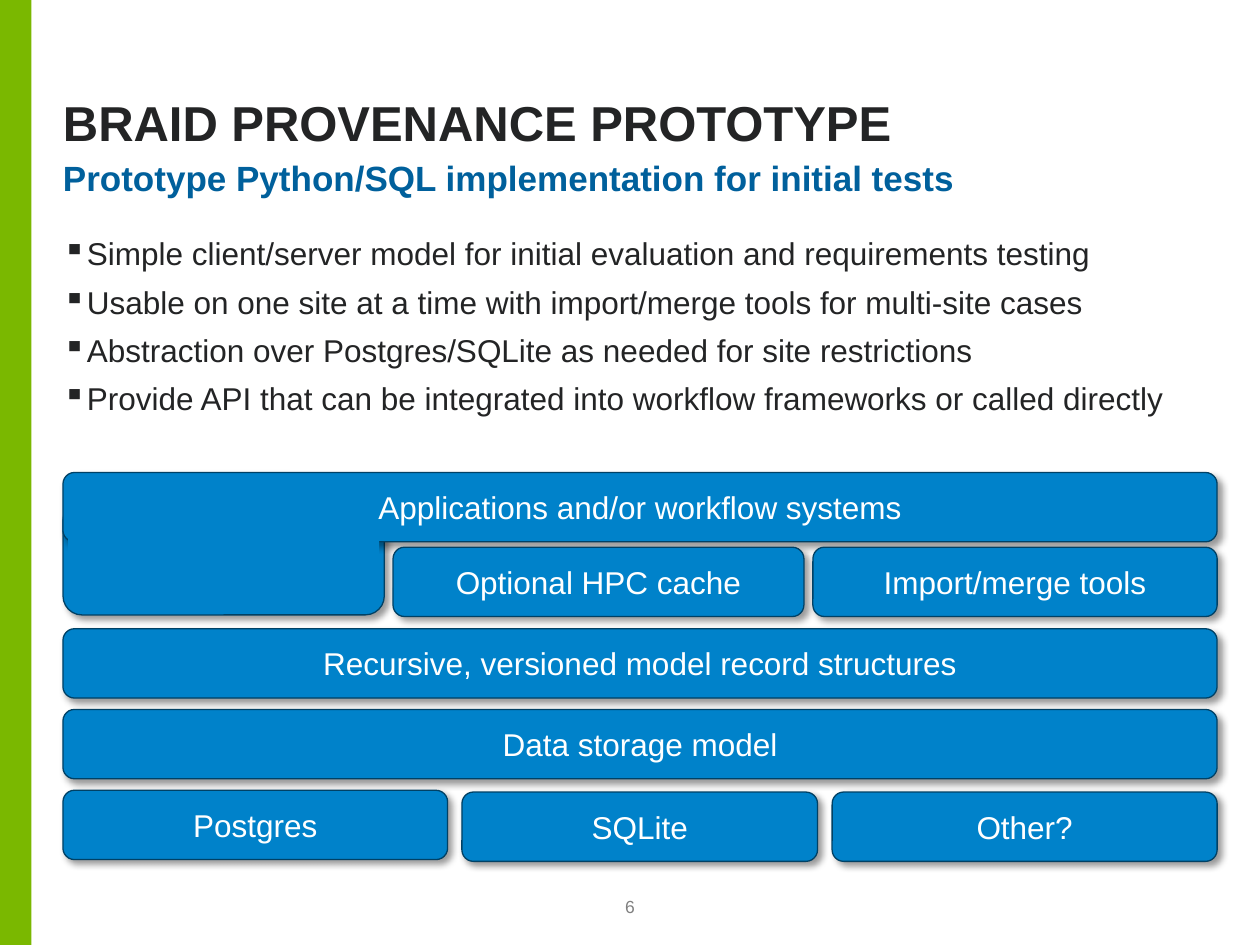
from lxml import etree
from pptx import Presentation
from pptx.dml.color import RGBColor
from pptx.enum import shapes, text
from pptx.oxml import ns
from pptx.util import Pt

GREEN = RGBColor(0x7A, 0xB8, 0x00)
BLUE = RGBColor(0x00, 0x82, 0xCA)
OUTLINE = RGBColor(0x00, 0x41, 0x65)
SUBTITLE_BLUE = RGBColor(0x00, 0x60, 0x9C)
DARK = RGBColor(0x23, 0x24, 0x25)
GRAY = RGBColor(0x80, 0x80, 0x80)
WHITE = RGBColor(0xFF, 0xFF, 0xFF)

LEFT, WIDTH = 36, 659.5
BAR_HEIGHT = 39.6
SHADOW = (
    f'<a:effectLst {ns.nsdecls("a")}>'
    '<a:outerShdw blurRad="50800" dist="38100" dir="2700000" algn="tl" rotWithShape="0">'
    '<a:srgbClr val="000000"><a:alpha val="40000"/></a:srgbClr>'
    '</a:outerShdw></a:effectLst>'
)


def write(shape, lines, size=18, color=DARK, bold=False, align=text.PP_ALIGN.LEFT,
          anchor=text.MSO_ANCHOR.TOP, insets=None, line_spacing=None,
          space_before=0, bullet=None):
    """Fill a shape with one paragraph per line; insets run left, top, right, bottom."""
    frame = shape.text_frame
    frame.word_wrap = True
    frame.vertical_anchor = anchor
    if insets:
        (frame.margin_left, frame.margin_top,
         frame.margin_right, frame.margin_bottom) = map(Pt, insets)
    for index, line in enumerate(lines):
        paragraph = frame.add_paragraph() if index else frame.paragraphs[0]
        if bullet:
            properties = paragraph._p.get_or_add_pPr()
            properties.set("marL", str(Pt(13.7)))
            properties.set("indent", str(-Pt(13.7)))
            etree.SubElement(properties, ns.qn("a:buChar"), char=bullet)
        paragraph.alignment = align
        if line_spacing:
            paragraph.line_spacing = line_spacing
        if index:
            paragraph.space_before = Pt(space_before)
        run = paragraph.add_run()
        run.text = line
        run.font.name = "Arial"
        run.font.size = Pt(size)
        run.font.bold = bold
        run.font.color.rgb = color


def add_block(kind, left, top, width, height, fill=BLUE, raised=False):
    """Add a filled shape; a raised one has an outline and a drop shadow."""
    shape = slide.shapes.add_shape(kind, Pt(left), Pt(top), Pt(width), Pt(height))
    shape.fill.solid()
    shape.fill.fore_color.rgb = fill
    if raised:
        shape.line.color.rgb = OUTLINE
        shape.line.width = Pt(0.75)
        shape._element.spPr.append(etree.fromstring(SHADOW))
    else:
        shape.line.fill.background()
        shape.shadow.inherit = False
    return shape


presentation = Presentation()
presentation.slide_width, presentation.slide_height = Pt(720), Pt(540)
slide = presentation.slides.add_slide(presentation.slide_layouts[6])
RECTANGLE = shapes.MSO_SHAPE.RECTANGLE
ROUNDED = shapes.MSO_SHAPE.ROUNDED_RECTANGLE

add_block(RECTANGLE, 0, 0, 18, 540, fill=GREEN)

title = slide.shapes.add_textbox(Pt(LEFT), Pt(21.6), Pt(WIDTH), Pt(65.5))
write(title, ["BRAID PROVENANCE PROTOTYPE"], size=28, bold=True,
      anchor=text.MSO_ANCHOR.BOTTOM, insets=(0, 0, 0, 0), line_spacing=0.95)

subtitle = slide.shapes.add_textbox(Pt(LEFT), Pt(92.2), Pt(WIDTH), Pt(39.6))
write(subtitle, ["Prototype Python/SQL implementation for initial tests"], size=20,
      color=SUBTITLE_BLUE, bold=True, insets=(0, 0, 0, 0), line_spacing=0.9)

body = slide.shapes.add_textbox(Pt(LEFT), Pt(134), Pt(WIDTH), Pt(129.6))
write(body, [
    "Simple client/server model for initial evaluation and requirements testing",
    "Usable on one site at a time with import/merge tools for multi-site cases",
    "Abstraction over Postgres/SQLite as needed for site restrictions",
    "Provide API that can be integrated into workflow frameworks or called directly",
], insets=(0, 0, 0, 3.6), space_before=6, bullet="▪")

page_number = slide.shapes.add_textbox(Pt(342), Pt(509.8), Pt(36), Pt(14.4))
write(page_number, ["6"], size=10, color=GRAY, align=text.PP_ALIGN.CENTER,
      anchor=text.MSO_ANCHOR.BOTTOM, insets=(0, 3.6, 0, 0))

# The applications layer reaches down on the left: a leg behind, a patch over the seam
add_block(ROUNDED, LEFT, 286.6, 183.6, 64.8, raised=True)

layers = [
    ("Applications and/or workflow systems", LEFT, 270, WIDTH),
    ("Recursive, versioned model record structures", LEFT, 359.3, WIDTH),
    ("Data storage model", LEFT, 405.4, WIDTH),
    ("Optional HPC cache", 224.6, 312.7, 234.8),
    ("Import/merge tools", 464.5, 312.7, 231),
    ("Postgres", LEFT, 451.6, 219.8),
    ("SQLite", 264, 452.6, 203.2),
    ("Other?", 475.5, 452.6, 220),
]
for label, left, top, width in layers:
    layer = add_block(ROUNDED, left, top, width, BAR_HEIGHT, raised=True)
    write(layer, [label], color=WHITE, align=text.PP_ALIGN.CENTER,
          anchor=text.MSO_ANCHOR.MIDDLE)

add_block(RECTANGLE, 38.9, 301.7, 177.8, 28.8)

presentation.save("out.pptx")
